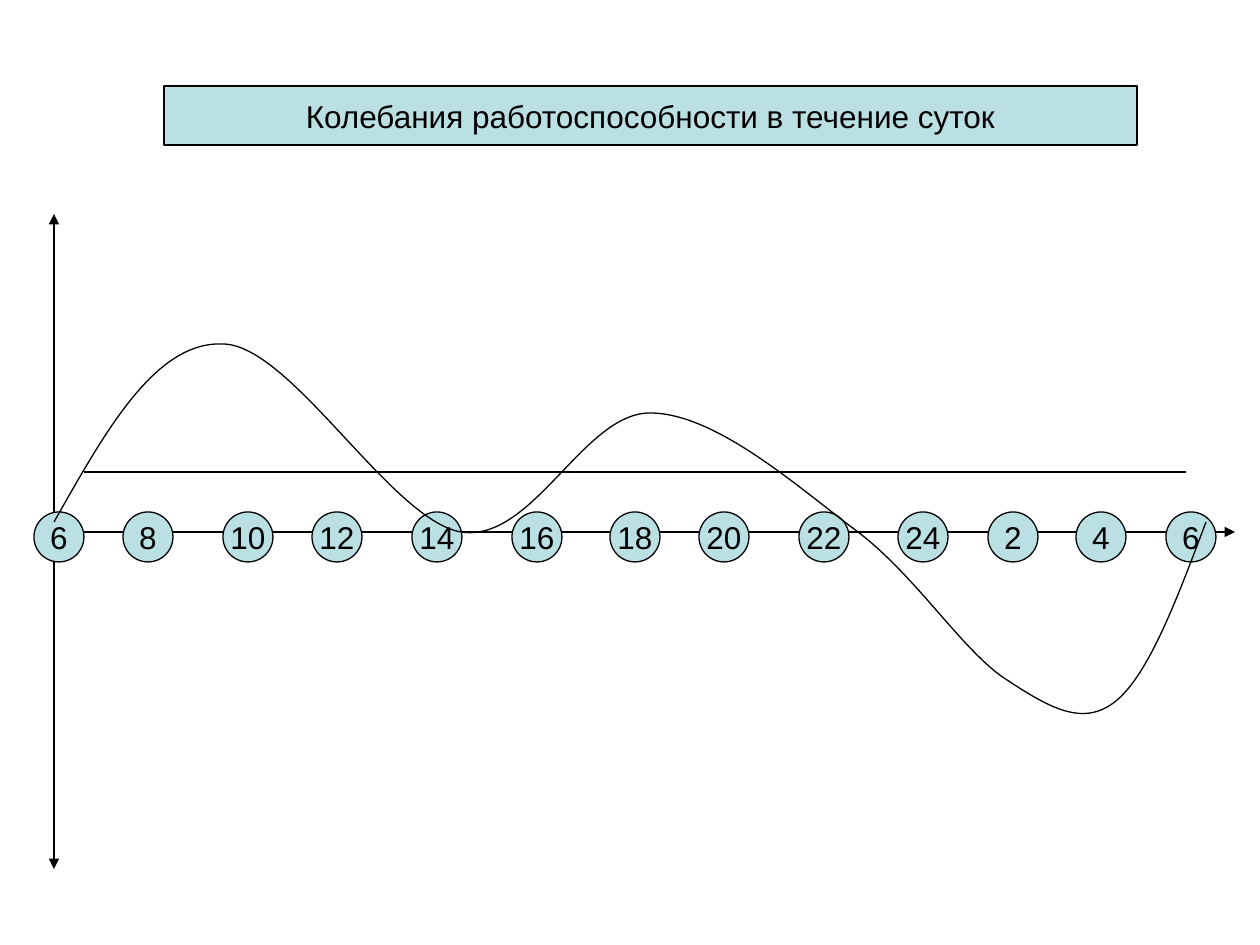
from lxml.etree import SubElement as Sub
from pptx import Presentation as Deck
from pptx.dml.color import RGBColor as Rgb
from pptx.enum.shapes import MSO_CONNECTOR as Conn, MSO_SHAPE as Kind
from pptx.enum.text import MSO_ANCHOR as Anchor, MSO_AUTO_SIZE as Auto, PP_ALIGN as Align
from pptx.oxml.ns import qn
from pptx.util import Pt

SCALE = 914400 / 126
HUE = {"fill": "BBE0E3", "ink": "000000"}
FONT = {"name": "Arial", "size": Pt(18), "bold": False}
FRAME = {"word_wrap": False, "auto_size": Auto.NONE, "vertical_anchor": Anchor.MIDDLE,
         "margin_left": 0, "margin_right": 0, "margin_top": 0, "margin_bottom": 0}
TITLE = "Колебания работоспособности в течение суток"
HOURS = [6, 8, 10, 12, 14, 16, 18, 20, 22, 24, 2, 4, 6]
LEFTS = [0, 89, 189, 278, 378, 478, 576, 665, 765, 864, 954, 1042, 1132]
CURVE = [(20, 308), (71, 218), (121, 127), (189, 130), (257, 131), (357, 306),
         (427, 318), (499, 329), (549, 199), (616, 199), (682, 199), (765, 274),
         (824, 318), (883, 363), (930, 439), (973, 466), (1017, 495), (1050, 513),
         (1082, 487), (1115, 460), (1143, 385), (1172, 308)]


def emu(*vals):
    """Turn px lengths into EMU."""
    return [round(v * SCALE) for v in vals]


def put(item, vals):
    """Set the attributes of an item from a dict."""
    for key, val in vals.items():
        setattr(item, key, val)


def ink(shape):
    """Give a shape the thin black line."""
    shape.line.color.rgb = Rgb.from_string(HUE["ink"])
    shape.line.width = Pt(0.75)


def label(shape, text):
    """Fill a shape and write centred text in it."""
    shape.fill.solid()
    shape.fill.fore_color.rgb = Rgb.from_string(HUE["fill"])
    ink(shape)
    frame = shape.text_frame
    put(frame, FRAME)
    para = frame.paragraphs[0]
    para.alignment = Align.CENTER
    run = para.add_run()
    run.text = text
    put(run.font, FONT)
    run.font.color.rgb = Rgb.from_string(HUE["ink"])


def rule(slide, ends, tips=()):
    """Draw a straight line with arrow tips at the named ends."""
    line = slide.shapes.add_connector(Conn.STRAIGHT, *emu(*ends))
    ink(line)
    for tip in tips:
        Sub(line.line._ln, qn(f"a:{tip}"), type="triangle")
    Sub(line._element.spPr, qn("a:effectLst"))


def wave(slide, x, y):
    """Draw the smooth curve with three points to each segment."""
    pen = slide.shapes.build_freeform(*CURVE[0], scale=SCALE)
    pen.add_line_segments(CURVE[1:], close=False)
    shape = pen.convert_to_shape(*emu(x, y))
    shape.shadow.inherit = False
    shape.fill.background()
    ink(shape)
    track = shape._element.spPr.find(".//" + qn("a:path"))
    steps = track.findall(qn("a:lnTo"))
    for i in range(0, len(steps), 3):
        bend = Sub(track, qn("a:cubicBezTo"))
        for step in steps[i:i + 3]:
            bend.append(step[0])
            track.remove(step)


def head(slide, box):
    """Place the title bar in its box."""
    title = slide.shapes.title
    put(title, dict(zip(("left", "top", "width", "height"), emu(*box))))
    label(title, TITLE)


def graph(slide, box):
    """Place axes, hours, curve and mean line in the box."""
    x, y, w, h = box
    rule(slide, (x + 20, y, x + 20, y + h), ("headEnd", "tailEnd"))
    rule(slide, (x + 20, y + 318, x + w, y + 318), ("tailEnd",))
    for hour, left in zip(HOURS, LEFTS):
        dot = slide.shapes.add_shape(Kind.OVAL, *emu(x + left, y + 298, 50, 50))
        dot.shadow.inherit = False
        label(dot, str(hour))
    wave(slide, x, y)
    rule(slide, (x + 50, y + 258, x + 1152, y + 258))


def main():
    """Build and save the slide."""
    deck = Deck()
    deck.slide_width, deck.slide_height = emu(1260, 945)
    slide = deck.slides.add_slide(deck.slide_layouts[5])
    head(slide, (164, 86, 973, 59))
    graph(slide, (34, 214, 1201, 655))
    deck.save("out.pptx")


if __name__ == "__main__":
    main()
